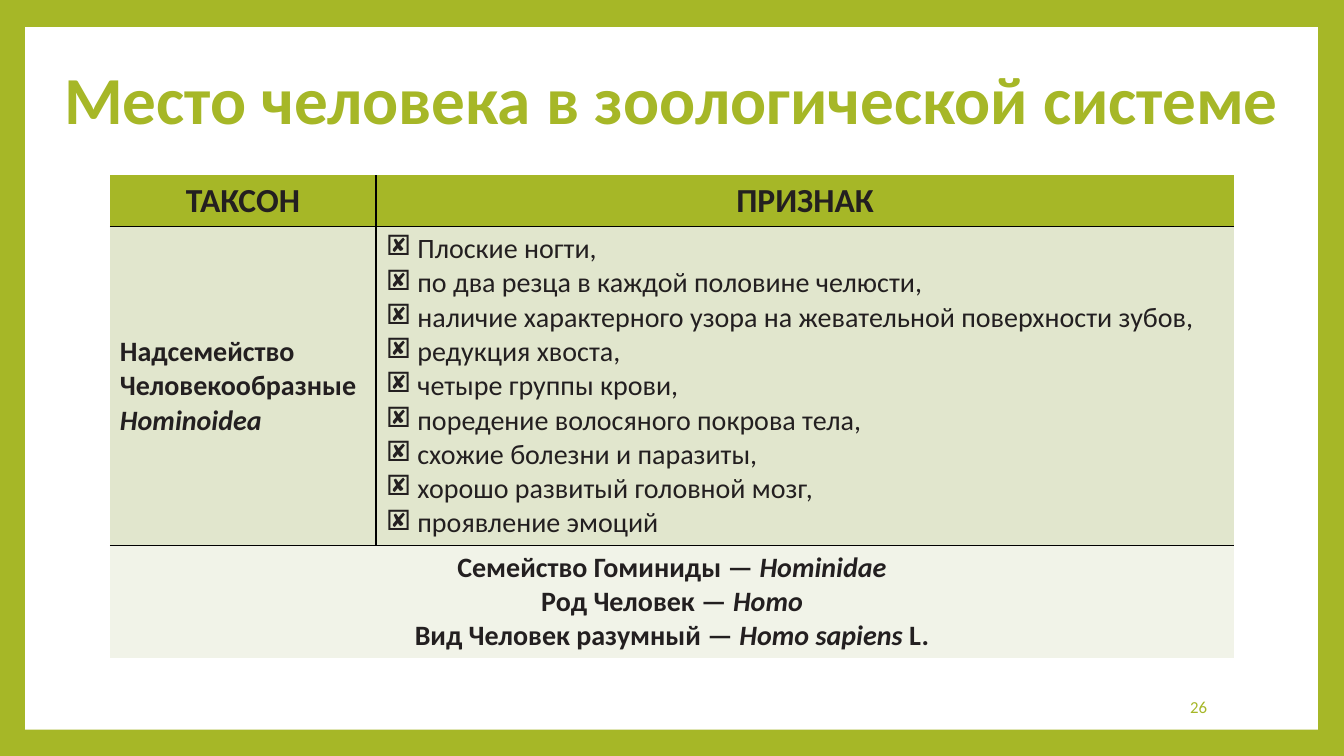
from lxml.etree import SubElement
from pptx import Presentation
from pptx.dml.color import RGBColor
from pptx.enum.shapes import MSO_SHAPE
from pptx.enum.text import MSO_ANCHOR as ANCHOR, PP_ALIGN as ALIGN
from pptx.oxml.ns import qn
from pptx.util import Inches, Pt

FONT = "Calibri"
GREEN, INK, WHITE, BLACK = "A6B727", "231F20", "FFFFFF", "000000"
SAGE, PALE = "E1E6CD", "F1F3E8"

TITLE = "Место человека в зоологической системе"
PAGE = "26"
HEADERS = ["ТАКСОН", "ПРИЗНАК"]
# Each line is a list of (text, italic) runs
TAXON = [[("Надсемейство Человекообразные", False)], [("Hominoidea", True)]]
TRAITS = [
    "Плоские ногти,",
    "по два резца в каждой половине челюсти,",
    "наличие характерного узора на жевательной поверхности зубов,",
    "редукция хвоста,",
    "четыре группы крови,",
    "поредение волосяного покрова тела,",
    "схожие болезни и паразиты,",
    "хорошо развитый головной мозг,",
    "проявление эмоций",
]
RANKS = [
    [("Семейство Гоминиды — ", False), ("Hominidae", True)],
    [("Род Человек — ", False), ("Homo", True)],
    [("Вид Человек разумный — ", False), ("Homo sapiens ", True), ("L.", False)],
]

SLIDE_W, SLIDE_H = 13.33, 7.5
FRAME_X, FRAME_Y, FRAME_W, FRAME_H = 0.25, 0.27, 12.82, 6.97
TABLE_X, TABLE_Y = 1.09, 1.74
COLS, ROWS = [2.64, 8.51], [0.51, 3.16, 1.12]


def rgb(value):
    return RGBColor.from_string(value)


def box(x, y, w, h):
    return [Inches(v) for v in (x, y, w, h)]


def add_run(p, text, size, color=INK, bold=False, italic=False):
    r = p.add_run()
    r.text = text
    r.font.name, r.font.size = FONT, Pt(size)
    r.font.bold, r.font.italic = bold, italic
    r.font.color.rgb = rgb(color)


def add_lines(p, lines):
    """Write bold lines into one paragraph, parted by line breaks."""
    for i, line in enumerate(lines):
        if i:
            p.add_line_break()
        for text, italic in line:
            add_run(p, text, 20, bold=True, italic=italic)


def add_bullet(p):
    pPr = p._p.get_or_add_pPr()
    pPr.set("marL", str(Inches(0.31)))
    pPr.set("indent", str(-Inches(0.31)))
    SubElement(pPr, qn("a:buFont"), typeface="Wingdings 2")
    SubElement(pPr, qn("a:buChar"), char="❑")


def style_cell(cell, fill, lined):
    """Draw black lines on the sides in lined, none on the others."""
    tcPr = cell._tc.get_or_add_tcPr()
    for side in "LRTB":
        ln = SubElement(tcPr, qn("a:ln" + side), w=str(Pt(1)))
        if side in lined:
            solid = SubElement(ln, qn("a:solidFill"))
            SubElement(solid, qn("a:srgbClr"), val=BLACK)
        else:
            SubElement(ln, qn("a:noFill"))
    cell.fill.solid()
    cell.fill.fore_color.rgb = rgb(fill)
    cell.vertical_anchor = ANCHOR.MIDDLE


def add_table(slide):
    table = slide.shapes.add_table(
        len(ROWS), len(COLS), *box(TABLE_X, TABLE_Y, sum(COLS), sum(ROWS))).table
    table.first_row = table.horz_banding = False
    for col, w in zip(table.columns, COLS):
        col.width = Inches(w)
    for row, h in zip(table.rows, ROWS):
        row.height = Inches(h)
    table.cell(2, 0).merge(table.cell(2, 1))

    for r, (fill, lined) in enumerate([(GREEN, "B"), (SAGE, "TB"), (PALE, "T")]):
        for c, inner in enumerate("RL"):
            style_cell(table.cell(r, c), fill, lined + (inner if r < 2 else ""))

    for c, header in enumerate(HEADERS):
        p = table.cell(0, c).text_frame.paragraphs[0]
        p.alignment = ALIGN.CENTER
        add_run(p, header, 24, bold=True)

    add_lines(table.cell(1, 0).text_frame.paragraphs[0], TAXON)
    tf = table.cell(1, 1).text_frame
    for i, trait in enumerate(TRAITS):
        p = tf.add_paragraph() if i else tf.paragraphs[0]
        add_bullet(p)
        add_run(p, trait, 20)

    p = table.cell(2, 0).text_frame.paragraphs[0]
    p.alignment = ALIGN.CENTER
    add_lines(p, RANKS)


def main():
    prs = Presentation()
    prs.slide_width, prs.slide_height = Inches(SLIDE_W), Inches(SLIDE_H)
    slide = prs.slides.add_slide(prs.slide_layouts[5])
    slide.background.fill.solid()
    slide.background.fill.fore_color.rgb = rgb(GREEN)

    panel = slide.shapes.add_shape(
        MSO_SHAPE.RECTANGLE, *box(FRAME_X, FRAME_Y, FRAME_W, FRAME_H))
    panel.shadow.inherit = False
    panel.fill.solid()
    panel.fill.fore_color.rgb = rgb(WHITE)
    panel.line.fill.background()

    add_table(slide)

    title = slide.shapes.title
    title.left, title.top, title.width, title.height = box(FRAME_X, 0.75, FRAME_W, 0.53)
    slide.shapes._spTree.append(title._element)  # bring in front of the panel
    tf = title.text_frame
    tf.word_wrap, tf.vertical_anchor = True, ANCHOR.MIDDLE
    p = tf.paragraphs[0]
    p.alignment, p.line_spacing = ALIGN.CENTER, 0.9
    add_run(p, TITLE, 48, GREEN, bold=True)

    tf = slide.shapes.add_textbox(*box(10.2, 6.81, 1.87, 0.4)).text_frame
    tf.word_wrap, tf.vertical_anchor = True, ANCHOR.MIDDLE
    p = tf.paragraphs[0]
    p.alignment = ALIGN.RIGHT
    add_run(p, PAGE, 12, GREEN)

    prs.save("out.pptx")


if __name__ == "__main__":
    main()
